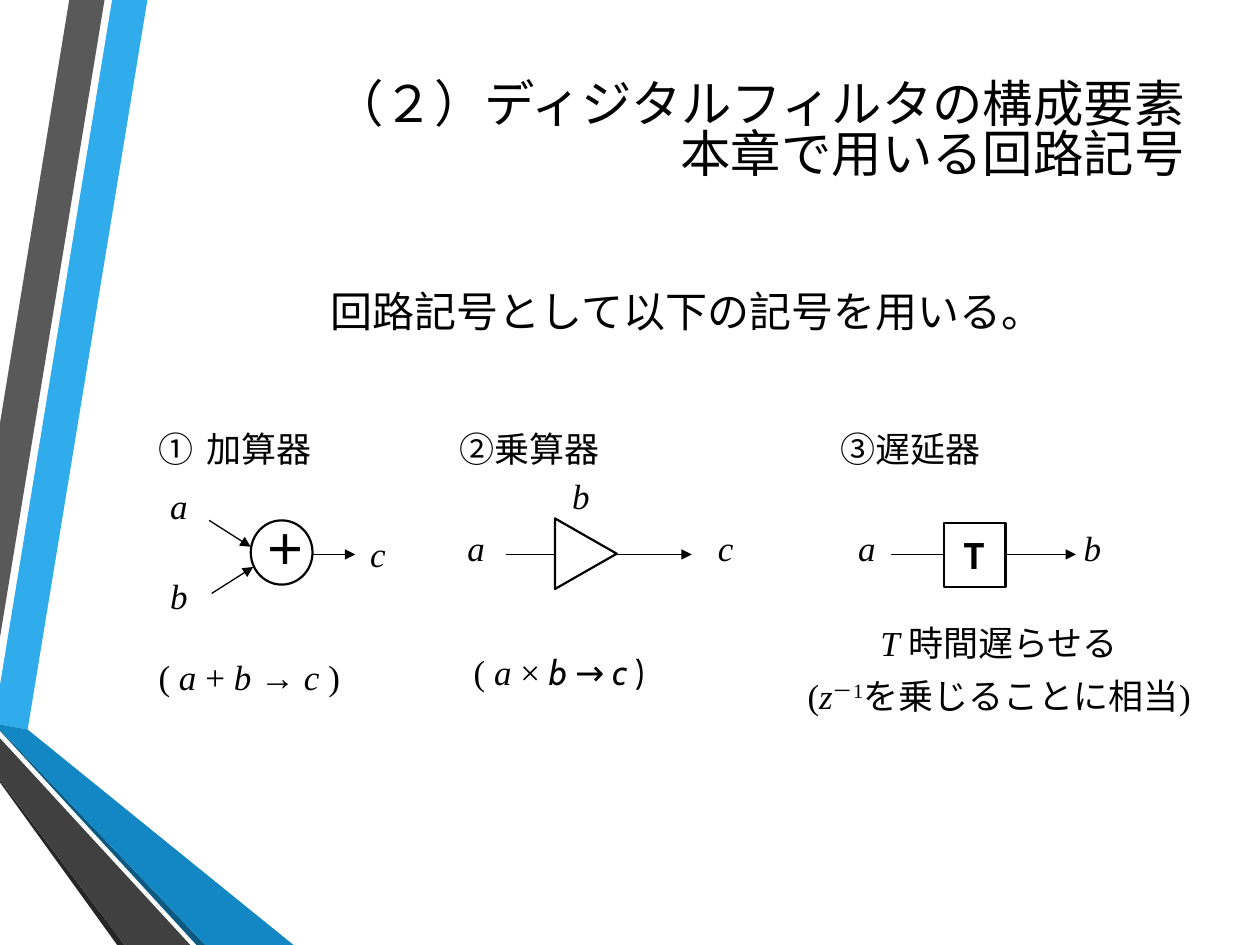
"""Build a slide on the circuit symbols of digital filters."""
import dataclasses

import lxml.etree
import pptx
import pptx.dml.color
import pptx.enum.shapes
import pptx.enum.text
import pptx.oxml.ns
import pptx.util

SCALE = 9144
SHAPE = pptx.enum.shapes.MSO_SHAPE
ALIGN = pptx.enum.text.PP_ALIGN
ANCHOR = pptx.enum.text.MSO_ANCHOR
INSETS = (10, 5, 10, 5)
FLUSH = (0, 0, 0, 0)


@dataclasses.dataclass(frozen=True)
class Theme:
    """Colours, fonts and type sizes of the slide."""
    ink: str = "000000"
    paper: str = "FFFFFF"
    sky: str = "30ACEC"
    blue: str = "1287C3"
    navy: str = "0C5A82"
    grey: str = "595959"
    dark: str = "404040"
    black: str = "262626"
    heading: str = "Cabin"
    serif: str = "Times New Roman"
    japanese: str = "Noto Sans CJK JP"
    title: float = 28.8
    lead: float = 24
    label: float = 20
    outline: float = 1.25
    wire: float = 0.75


THEME = Theme()
RIBBONS = (
    (THEME.sky, ((0, 544), (0, 575), (22, 579), (117, 0), (89, 0))),
    (THEME.grey, ((83, 0), (55, 0), (0, 336), (0, 506))),
    (THEME.black, ((0, 619), (0, 621), (93, 750), (99, 750))),
    (THEME.navy, ((0, 579), (0, 580), (156, 750), (163, 750))),
    (THEME.blue, ((0, 579), (163, 750), (233, 750), (22, 579), (0, 575))),
    (THEME.dark, ((0, 619), (99, 750), (151, 750), (0, 586))),
)
WIRES = (
    (166, 413, 199, 434), (168, 471, 201, 450), (248, 440, 282, 440),
    (402, 440, 549, 440), (707, 440, 854, 440),
)
SIGNALS = (
    ("a", 107, 374), ("b", 107, 445), ("c", 265, 412),
    ("a", 343, 407), ("b", 426, 366), ("c", 541, 407),
    ("a", 653, 407), ("b", 832, 407),
)


def emu(*lengths):
    """Turn px lengths into EMU."""
    return [pptx.util.Emu(length * SCALE) for length in lengths]


def colour(code):
    """Return the colour for a hex code."""
    return pptx.dml.color.RGBColor.from_string(code)


def add_xml(parent, tag, **attributes):
    """Append a drawing element to a parent."""
    return lxml.etree.SubElement(parent, pptx.oxml.ns.qn(tag), attributes)


def style_span(span, size, font, bold=False, italic=False, baseline=0):
    """Set the type of one run."""
    span.font.size = pptx.util.Pt(size)
    span.font.bold = bold
    span.font.italic = italic
    span.font.color.rgb = colour(THEME.ink)
    span.font.name = font
    properties = span.font._element
    add_xml(properties, "a:ea", typeface=THEME.japanese)
    if baseline:
        properties.set("baseline", str(baseline))


def set_frame(box, insets, anchor):
    """Set wrapping, margins and anchor of a text frame."""
    frame = box.text_frame
    frame.word_wrap = True
    frame.vertical_anchor = anchor
    (frame.margin_left, frame.margin_top,
     frame.margin_right, frame.margin_bottom) = emu(*insets)
    return frame


def write(para, text, size, font, align, spacing=None, **style):
    """Fill a paragraph with text in one style."""
    para.text = text
    para.alignment = align
    para.line_spacing = spacing
    for span in para.runs:
        style_span(span, size, font, **style)


def write_spans(para, spans, align, spacing=None):
    """Fill a paragraph with label-sized spans of mixed styles."""
    para.alignment = align
    para.line_spacing = spacing
    for text, style in spans:
        span = para.add_run()
        span.text = text
        style_span(span, THEME.label, **{"font": THEME.serif, **style})


def add_box(page, place, insets=INSETS, anchor=ANCHOR.TOP):
    """Add a text box and return its first paragraph."""
    box = page.shapes.add_textbox(*emu(*place))
    return set_frame(box, insets, anchor).paragraphs[0]


def add_ribbon(page, fill, points):
    """Add a filled polygon without an outline."""
    builder = page.shapes.build_freeform(*points[0], scale=SCALE)
    builder.add_line_segments(points[1:], close=True)
    ribbon = builder.convert_to_shape()
    ribbon.shadow.inherit = False
    ribbon.fill.solid()
    ribbon.fill.fore_color.rgb = colour(fill)
    ribbon.line.fill.background()


def add_symbol(page, kind, place):
    """Add an outlined circuit symbol."""
    symbol = page.shapes.add_shape(kind, *emu(*place))
    symbol.shadow.inherit = False
    symbol.fill.solid()
    symbol.fill.fore_color.rgb = colour(THEME.paper)
    symbol.line.color.rgb = colour(THEME.ink)
    symbol.line.width = pptx.util.Pt(THEME.outline)
    return symbol


def add_wire(page, ends):
    """Add a signal line with an arrowhead."""
    wire = page.shapes.add_connector(
        pptx.enum.shapes.MSO_CONNECTOR.STRAIGHT, *emu(*ends))
    wire.line.color.rgb = colour(THEME.ink)
    wire.line.width = pptx.util.Pt(THEME.wire)
    add_xml(wire.line._get_or_add_ln(), "a:tailEnd", type="triangle")
    add_xml(wire._element.spPr, "a:effectLst")


def add_symbols(page):
    """Add the adder, multiplier and delay symbols."""
    tight = pptx.util.Pt(16)
    adder = add_symbol(page, SHAPE.OVAL, (199, 413, 49, 51))
    write(set_frame(adder, (4, 12, 0, 0), ANCHOR.MIDDLE).paragraphs[0], "＋",
          THEME.lead, THEME.heading, ALIGN.JUSTIFY, tight, bold=True)
    add_symbol(page, SHAPE.ISOSCELES_TRIANGLE, (437, 415, 56, 49)).rotation = 90
    delay = add_symbol(page, SHAPE.RECTANGLE, (749, 415, 49, 51))
    write(set_frame(delay, (0, 12, 0, 0), ANCHOR.MIDDLE).paragraphs[0], "T",
          THEME.label, THEME.japanese, ALIGN.CENTER, tight, bold=True)
    for text, left, top in SIGNALS:
        write(add_box(page, (left, top, 70, 66), FLUSH, ANCHOR.MIDDLE), text,
              THEME.label, THEME.serif, ALIGN.CENTER, tight, italic=True)


def add_captions(page):
    """Add the symbol names and the formulas below them."""
    for text, left in (("加算器", 116), ("②乗算器", 355), ("③遅延器", 657)):
        para = add_box(page, (left, 334, 188, 54))
        write(para, text, THEME.label, THEME.japanese, ALIGN.JUSTIFY)
        if left == 116:
            properties = para._p.get_or_add_pPr()
            indent = emu(38)[0]
            properties.set("marL", str(indent))
            properties.set("indent", str(-indent))
            add_xml(properties, "a:buAutoNum", type="circleNumDbPlain")
    plain, slanted = {}, {"italic": True}
    sans = {"font": THEME.heading}
    sans_slanted = {**sans, **slanted}
    tight = pptx.util.Pt(15)
    write_spans(add_box(page, (116, 515, 188, 54)), (
        ("(", plain), (" a ", slanted), ("+ ", plain), ("b ", slanted),
        ("→ ", plain), ("c ", slanted), (")", plain)), ALIGN.JUSTIFY)
    write_spans(add_box(page, (376, 529, 258, 37), FLUSH), (
        ("(", plain), (" a ", slanted), ("× ", plain), ("b ", sans_slanted),
        ("→ ", sans), ("c ", sans_slanted), (")", sans)), ALIGN.JUSTIFY, tight)
    box = page.shapes.add_textbox(*emu(596, 506, 394, 96))
    frame = set_frame(box, FLUSH, ANCHOR.TOP)
    write_spans(frame.paragraphs[0], (("T ", slanted), ("時間遅らせる", plain)),
                ALIGN.CENTER, tight)
    para = frame.add_paragraph()
    para.space_before = tight
    write_spans(para, (("(", plain), ("z", slanted), ("－1", {"baseline": 30000}),
                       ("を乗じることに相当)", plain)), ALIGN.CENTER, tight)


def main():
    """Build and save the slide."""
    deck = pptx.Presentation()
    deck.slide_width, deck.slide_height = emu(1000, 750)
    page = deck.slides.add_slide(deck.slide_layouts[6])
    for fill, points in RIBBONS:
        add_ribbon(page, fill, points)
    write(add_box(page, (107, 50, 843, 110), anchor=ANCHOR.MIDDLE),
          "（２）ディジタルフィルタの構成要素\v本章で用いる回路記号",
          THEME.title, THEME.heading, ALIGN.RIGHT, 0.84)
    write(add_box(page, (107, 222, 843, 50)), "　回路記号として以下の記号を用いる。",
          THEME.lead, THEME.serif, ALIGN.CENTER)
    for ends in WIRES:
        add_wire(page, ends)
    add_symbols(page)
    add_captions(page)
    deck.save("out.pptx")


if __name__ == "__main__":
    main()
